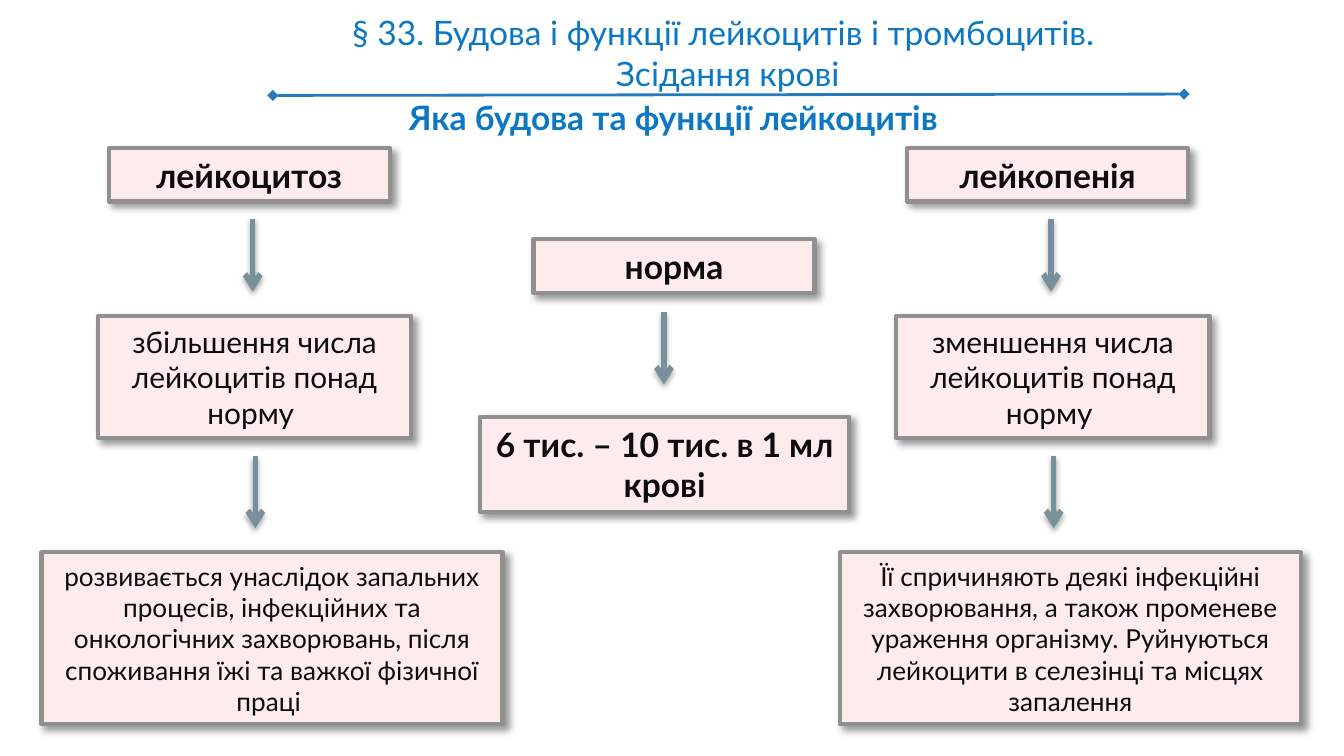
from lxml import etree
from pptx import Presentation
from pptx.dml.color import RGBColor
from pptx.enum.shapes import MSO_CONNECTOR, MSO_SHAPE
from pptx.enum.text import MSO_ANCHOR, PP_ALIGN
from pptx.oxml.ns import qn
from pptx.util import Inches, Pt

STRAIGHT = MSO_CONNECTOR.STRAIGHT
RECTANGLE = MSO_SHAPE.RECTANGLE
CENTER = PP_ALIGN.CENTER
TOP, MIDDLE = MSO_ANCHOR.TOP, MSO_ANCHOR.MIDDLE

FONT = "Lato"
HEADING_BLUE = RGBColor(0x0C, 0x77, 0xC3)
RULE_BLUE = RGBColor(0x25, 0x7B, 0xBE)
BOX_PINK = RGBColor(0xFE, 0xEC, 0xEC)
BORDER_GRAY = RGBColor(0x90, 0x90, 0x90)
ARROW_GRAY = RGBColor(0x78, 0x90, 0x9C)
TEXT_BLACK = RGBColor(0x0D, 0x0D, 0x0D)

ARROW_LENGTH = 0.54
SIDE_COLUMNS = [
    (0.31, "лейкоцитоз", "збільшення числа лейкоцитів понад норму ",
     "розвивається унаслідок запальних процесів, інфекційних та онкологічних "
     "захворювань, після споживання їжі та важкої фізичної праці "),
    (6.25, "лейкопенія", "зменшення числа лейкоцитів понад норму ",
     "Її спричиняють деякі інфекційні захворювання, а також променеве ураження "
     "організму. Руйнуються лейкоцити в селезінці та місцях запалення"),
]


def write_text(shape, text, size, color, bold, anchor, vertical_margin):
    frame = shape.text_frame
    frame.word_wrap = True
    frame.vertical_anchor = anchor
    frame.margin_left = frame.margin_right = Inches(0.1)
    frame.margin_top = frame.margin_bottom = Inches(vertical_margin)
    frame.text = text
    for paragraph in frame.paragraphs:
        paragraph.alignment = CENTER
        paragraph.font.name = FONT
        paragraph.font.size = Pt(size)
        paragraph.font.bold = bold
        paragraph.font.color.rgb = color


def add_shadow(effects, opacity, blur, distance, angle):
    shadow = etree.SubElement(
        effects, qn("a:outerShdw"), blurRad=str(Pt(blur)), dist=str(Pt(distance)),
        dir=str(angle * 60000), rotWithShape="0")
    color = etree.SubElement(shadow, qn("a:srgbClr"), val="000000")
    etree.SubElement(color, qn("a:alpha"), val=str(opacity * 1000))


def add_line(shapes, start, end, color, width, head=None, tail=None):
    points = [Inches(value) for value in (*start, *end)]
    connector = shapes.add_connector(STRAIGHT, *points)
    connector.line.color.rgb = color
    connector.line.width = Pt(width)
    outline = connector.line._get_or_add_ln()
    for tag, kind in (("a:headEnd", head), ("a:tailEnd", tail)):
        if kind:
            etree.SubElement(outline, qn(tag), type=kind)
    return etree.SubElement(connector._element.spPr, qn("a:effectLst"))


def add_arrow(shapes, x, y):
    effects = add_line(shapes, (x, y), (x, y + ARROW_LENGTH), ARROW_GRAY, 3, tail="arrow")
    add_shadow(effects, 35, 3.1, 1.8, 90)


def add_box(shapes, left, top, width, height, text, size, bold=False):
    box = shapes.add_shape(
        RECTANGLE, Inches(left), Inches(top), Inches(width), Inches(height))
    box.fill.solid()
    box.fill.fore_color.rgb = BOX_PINK
    box.line.color.rgb = BORDER_GRAY
    box.line.width = Pt(2.25)
    box.shadow.inherit = False
    add_shadow(box._element.spPr.find(qn("a:effectLst")), 40, 4, 3, 45)
    write_text(box, text, size, TEXT_BLACK, bold, MIDDLE, 0.05)


def add_side_column(slide, left, term, meaning, cause):
    shapes = slide.shapes.add_group_shape().shapes
    add_box(shapes, left + 0.5, 1.1, 2.09, 0.4, term, 18, bold=True)
    add_box(shapes, left + 0.42, 2.35, 2.33, 0.91, meaning, 16)
    add_box(shapes, left, 4.11, 3.43, 1.28, cause, 14)
    add_arrow(shapes, left + 1.57, 1.63)
    add_arrow(shapes, left + 1.59, 3.39)


def add_norm_column(slide):
    shapes = slide.shapes.add_group_shape().shapes
    add_box(shapes, 3.97, 1.78, 2.09, 0.4, "норма", 18, bold=True)
    add_arrow(shapes, 4.94, 2.32)
    add_box(shapes, 3.57, 3.1, 2.75, 0.71, "6 тис. – 10 тис. в 1 мл крові", 18, bold=True)


def add_headings(slide):
    title = slide.shapes.title
    title.left, title.top = Inches(1.83), Inches(-0.01)
    title.width, title.height = Inches(7.17), Inches(0.81)
    write_text(title, "§ 33. Будова і функції лейкоцитів і тромбоцитів. \nЗсідання крові",
               18, HEADING_BLUE, False, TOP, 0.1)
    add_line(slide.shapes, (2.03, 0.71), (8.81, 0.7), RULE_BLUE, 1.5,
             head="diamond", tail="diamond")
    question = slide.shapes.add_textbox(
        Inches(2.43), Inches(0.62), Inches(5.22), Inches(0.5))
    write_text(question, "Яка будова та функції лейкоцитів ",
               18, HEADING_BLUE, True, TOP, 0.1)


def main():
    presentation = Presentation()
    presentation.slide_width = Inches(10)
    presentation.slide_height = Inches(10 * 9 / 16)
    slide = presentation.slides.add_slide(presentation.slide_layouts[5])
    add_headings(slide)
    for column in SIDE_COLUMNS:
        add_side_column(slide, *column)
    add_norm_column(slide)
    presentation.save("out.pptx")


if __name__ == "__main__":
    main()
